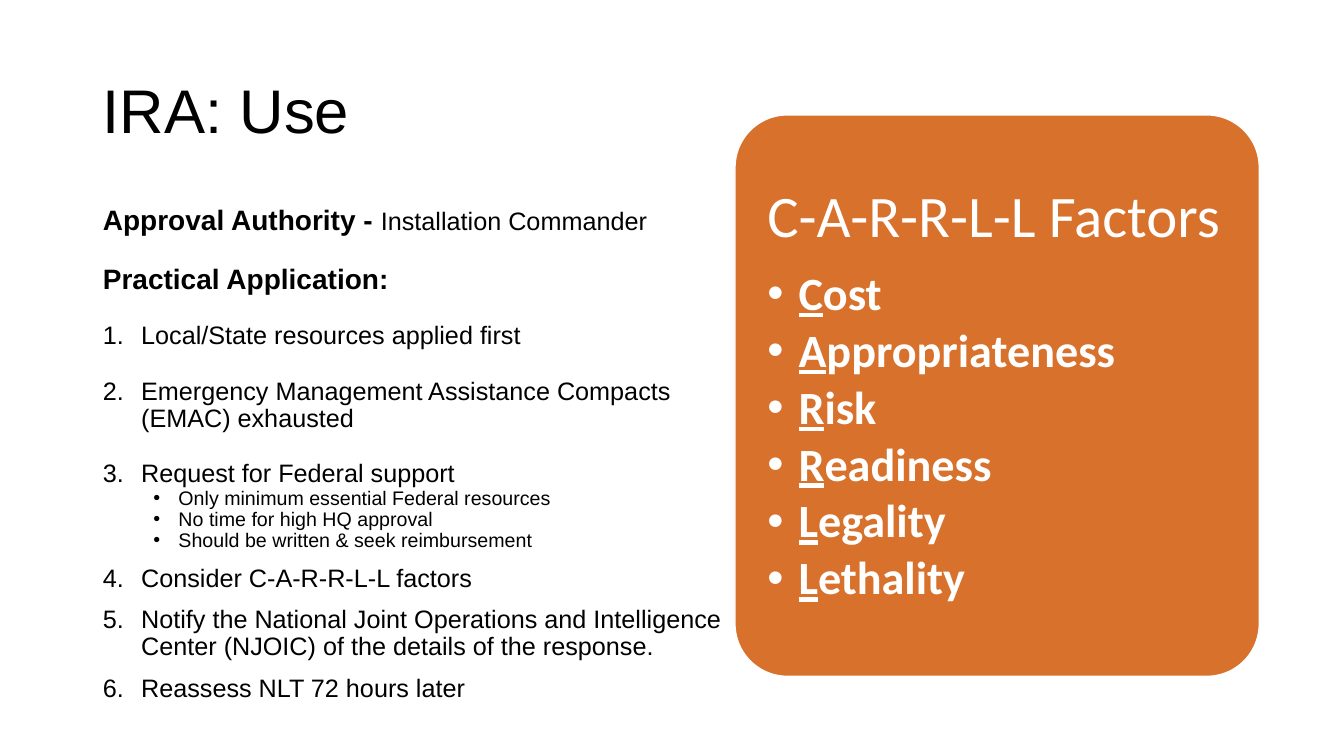
from lxml import etree
from pptx import Presentation
from pptx.dml.color import RGBColor
from pptx.enum.shapes import MSO_SHAPE as Shape
from pptx.enum.text import MSO_ANCHOR as Anchor, MSO_AUTO_SIZE as AutoSize, PP_ALIGN as Align
from pptx.oxml.ns import qn
from pptx.util import Inches, Pt

BLACK, WHITE, ORANGE = "000000", "FFFFFF", "D7712C"


def color(hex_code):
    return RGBColor.from_string(hex_code)


def add_span(para, text, size, font="Arial", hex_code=BLACK, bold=False, underline=False):
    span = para.add_run()
    span.text = text
    span.font.size = Pt(size)
    span.font.name = font
    span.font.color.rgb = color(hex_code)
    span.font.bold = bold
    span.font.underline = underline


def add_para(frame, marker=None, hanging=0, left=0, level=0, before=0, after=0):
    """Add a paragraph; marker is None, "number" or a bullet character."""
    first = frame.paragraphs[0]
    para = frame.add_paragraph() if first.runs else first
    para.level = level
    para.alignment = Align.LEFT
    para.line_spacing = 0.9
    para.space_before, para.space_after = Pt(before), Pt(after)
    props = para._p.get_or_add_pPr()
    props.set("marL", str(Inches(left)))
    props.set("indent", str(-Inches(hanging)))
    if marker is None:
        etree.SubElement(props, qn("a:buNone"))
    else:
        etree.SubElement(props, qn("a:buFont")).set("typeface", "Arial")
        if marker == "number":
            etree.SubElement(props, qn("a:buAutoNum")).set("type", "arabicPeriod")
        else:
            etree.SubElement(props, qn("a:buChar")).set("char", marker)
    return para


def place(shape, left, top, width, height):
    shape.left, shape.top = Inches(left), Inches(top)
    shape.width, shape.height = Inches(width), Inches(height)


def prepare_frame(shape, anchor, inset_x=0.1, inset_y=0.05):
    frame = shape.text_frame
    frame.word_wrap = True
    frame.auto_size = AutoSize.NONE
    frame.vertical_anchor = anchor
    frame.margin_left = frame.margin_right = Inches(inset_x)
    frame.margin_top = frame.margin_bottom = Inches(inset_y)
    return frame


def fill_title(title, box):
    place(title, *box)
    frame = prepare_frame(title, Anchor.MIDDLE)
    add_span(add_para(frame), "IRA: Use", 44)


def fill_body(body, box):
    place(body, *box)
    frame = prepare_frame(body, Anchor.TOP)

    # Headings
    approval = add_para(frame)
    add_span(approval, "Approval Authority - ", 20, bold=True)
    add_span(approval, "Installation Commander", 18)
    add_span(add_para(frame, before=20), "Practical Application:", 20, bold=True)

    # Numbered steps: text, space before, sub-points
    steps = [
        ("Local/State resources applied first", 20, []),
        ("Emergency Management Assistance Compacts (EMAC) exhausted", 20, []),
        ("Request for Federal support", 20, [
            "Only minimum essential Federal resources",
            "No time for high HQ approval",
            "Should be written & seek reimbursement",
        ]),
        ("Consider C-A-R-R-L-L factors", 10, []),
        ("Notify the National Joint Operations and Intelligence Center (NJOIC) "
         "of the details of the response.", 10, []),
        ("Reassess NLT 72 hours later", 10, []),
    ]
    for step, before, points in steps:
        add_span(add_para(frame, "number", 0.38, 0.38, before=before), step, 18)
        for point in points:
            add_span(add_para(frame, "•", 0.25, 0.75, level=1), point, 14)


def add_factors_panel(page, box):
    left, top, width, height = box

    # Rounded card
    card = page.shapes.add_shape(Shape.ROUNDED_RECTANGLE, *map(Inches, box))
    card.adjustments[0] = 0.1
    card.shadow.inherit = False
    card.fill.solid()
    card.fill.fore_color.rgb = color(ORANGE)
    card.line.color.rgb = color(WHITE)
    card.line.width = Pt(1)

    # Heading and factors
    gap = 0.15
    inner = (left + gap, top + gap, width - 2 * gap, height - 2 * gap)
    label = page.shapes.add_textbox(*map(Inches, inner))
    frame = prepare_frame(label, Anchor.MIDDLE, 0.17, 0.17)
    add_span(add_para(frame, after=14.7), "C-A-R-R-L-L Factors", 42, "Calibri", WHITE)
    for factor in ("Cost", "Appropriateness", "Risk", "Readiness", "Legality", "Lethality"):
        para = add_para(frame, "•", 0.31, 0.31, level=1, after=5)
        add_span(para, factor[0], 33, "Calibri", WHITE, bold=True, underline=True)
        add_span(para, factor[1:], 33, "Calibri", WHITE, bold=True)


def main():
    deck = Presentation()
    deck.slide_width, deck.slide_height = Inches(13.33), Inches(7.5)
    page = deck.slides.add_slide(deck.slide_layouts[1])
    fill_title(page.shapes.title, (0.92, 0.4, 11.5, 1.45))
    fill_body(page.placeholders[1], (0.92, 2, 6.37, 4.98))
    add_factors_panel(page, (7.29, 1.14, 5.2, 5.57))
    deck.save("out.pptx")


if __name__ == "__main__":
    main()
